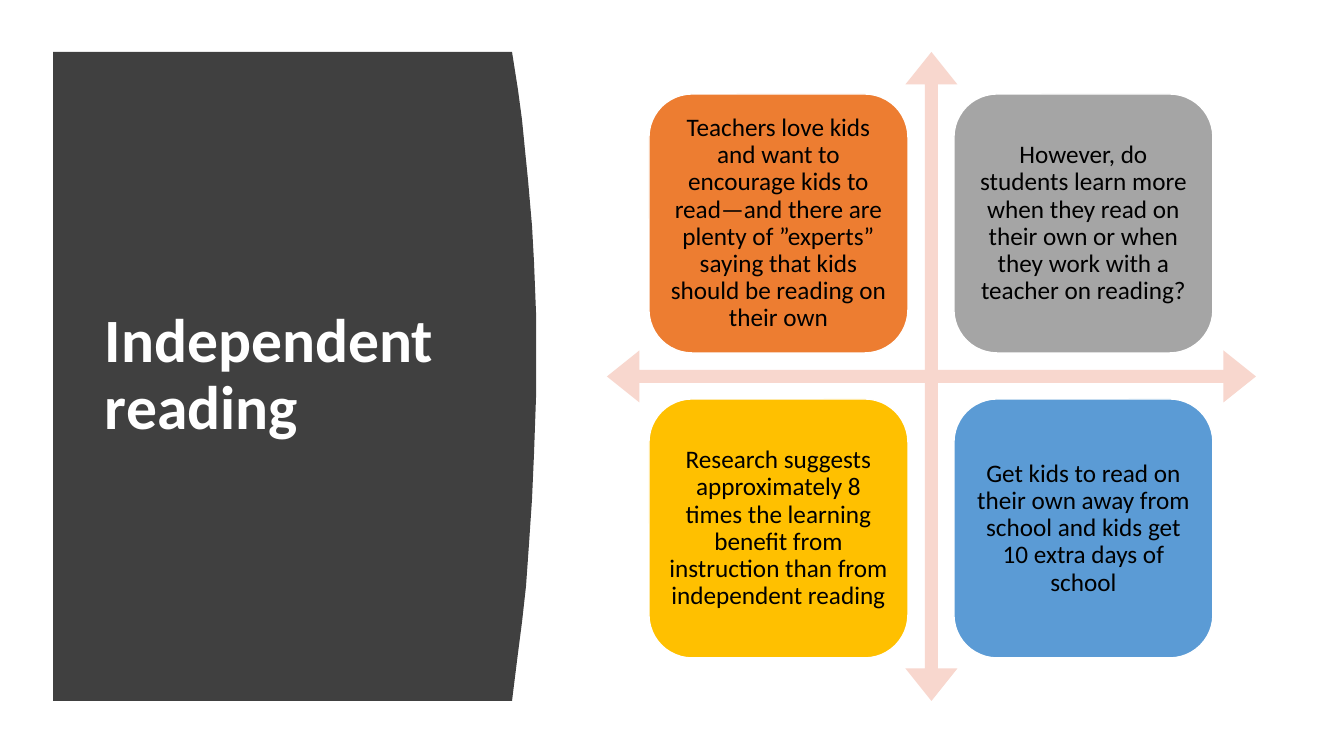
from pptx import Presentation, util as u
from pptx.dml.color import RGBColor
from pptx.enum import shapes, text

# Colours
WHITE = RGBColor(0xFF, 0xFF, 0xFF)
BLACK = RGBColor(0, 0, 0)
DARK = RGBColor(0x40, 0x40, 0x40)
PINK = RGBColor(0xF8, 0xD7, 0xCE)
ORANGE = RGBColor(0xED, 0x7D, 0x31)
GREY = RGBColor(0xA5, 0xA5, 0xA5)
GOLD = RGBColor(0xFF, 0xC0, 0x00)
BLUE = RGBColor(0x5B, 0x9B, 0xD5)

# Content
TITLE = "Independent reading"
CARDS = [
    ("Teachers love kids and want to encourage kids to read—and there are "
     "plenty of ”experts” saying that kids should be reading on their own", ORANGE),
    ("However, do students learn more when they read on their own or when "
     "they work with a teacher on reading?", GREY),
    ("Research suggests approximately 8 times the learning benefit from "
     "instruction than from independent reading", GOLD),
    ("Get kids to read on their own away from school and kids get 10 extra "
     "days of school", BLUE),
]

# Layout in px
SCALE = 914400 / 100.8
WIDTH, HEIGHT = 1344, 756
LEFT, TOP, SIDE = 53, 52, 649
CURVE = [(512, 52), (518, 90), (522, 120), (525, 150), (528, 180), (532, 226),
         (534, 262), (536, 313), (536, 397), (534, 454), (532, 499), (529, 544),
         (526, 586), (522, 622), (518, 653), (515, 677), (512, 701)]
CROSS = 607
CARD_X, CARD_Y, CARD, STEP = 649, 94, 259, 305


def px(n):
    return u.Emu(round(n * SCALE))


def box(*rect):
    return [px(n) for n in rect]


def paint(shape, fill, line=None):
    shape.shadow.inherit = False
    shape.fill.solid()
    shape.fill.fore_color.rgb = fill
    if line is None:
        shape.line.fill.background()
    else:
        shape.line.color.rgb = line
        shape.line.width = u.Pt(1)


def write(shape, words, size=18, color=BLACK, bold=False,
          align=text.PP_ALIGN.CENTER, pad=(7, 7)):
    frame = shape.text_frame
    frame.word_wrap = True
    frame.vertical_anchor = text.MSO_ANCHOR.MIDDLE
    frame.margin_left = frame.margin_right = px(pad[0])
    frame.margin_top = frame.margin_bottom = px(pad[1])
    para = frame.paragraphs[0]
    para.alignment = align
    para.line_spacing = 0.9
    run = para.add_run()
    run.text = words
    font = run.font
    font.name, font.size, font.bold = "Calibri", u.Pt(size), bold
    font.color.rgb = color


deck = Presentation()
deck.slide_width, deck.slide_height = px(WIDTH), px(HEIGHT)
parts = deck.slides.add_slide(deck.slide_layouts[6]).shapes

# Dark panel with a bowed right edge
edge = parts.build_freeform(LEFT, TOP, scale=SCALE)
edge.add_line_segments(CURVE + [(LEFT, TOP + SIDE)], close=True)
paint(edge.convert_to_shape(), DARK)

# Title
write(parts.add_textbox(*box(95, 112, 377, 528)), TITLE, size=44, color=WHITE,
      bold=True, align=text.PP_ALIGN.LEFT, pad=(10, 5))

# Four-way arrow
cross = parts.add_shape(shapes.MSO_SHAPE.QUAD_ARROW, *box(CROSS, TOP, SIDE, SIDE))
for i, part in enumerate((0.02, 0.04, 0.05)):
    cross.adjustments[i] = part
paint(cross, PINK)

# Cards in a two by two grid
for i, (words, fill) in enumerate(CARDS):
    row, col = divmod(i, 2)
    card = parts.add_shape(
        shapes.MSO_SHAPE.ROUNDED_RECTANGLE,
        *box(CARD_X + col * STEP, CARD_Y + row * STEP, CARD, CARD))
    paint(card, fill, WHITE)
    write(card, words)

deck.save("out.pptx")
